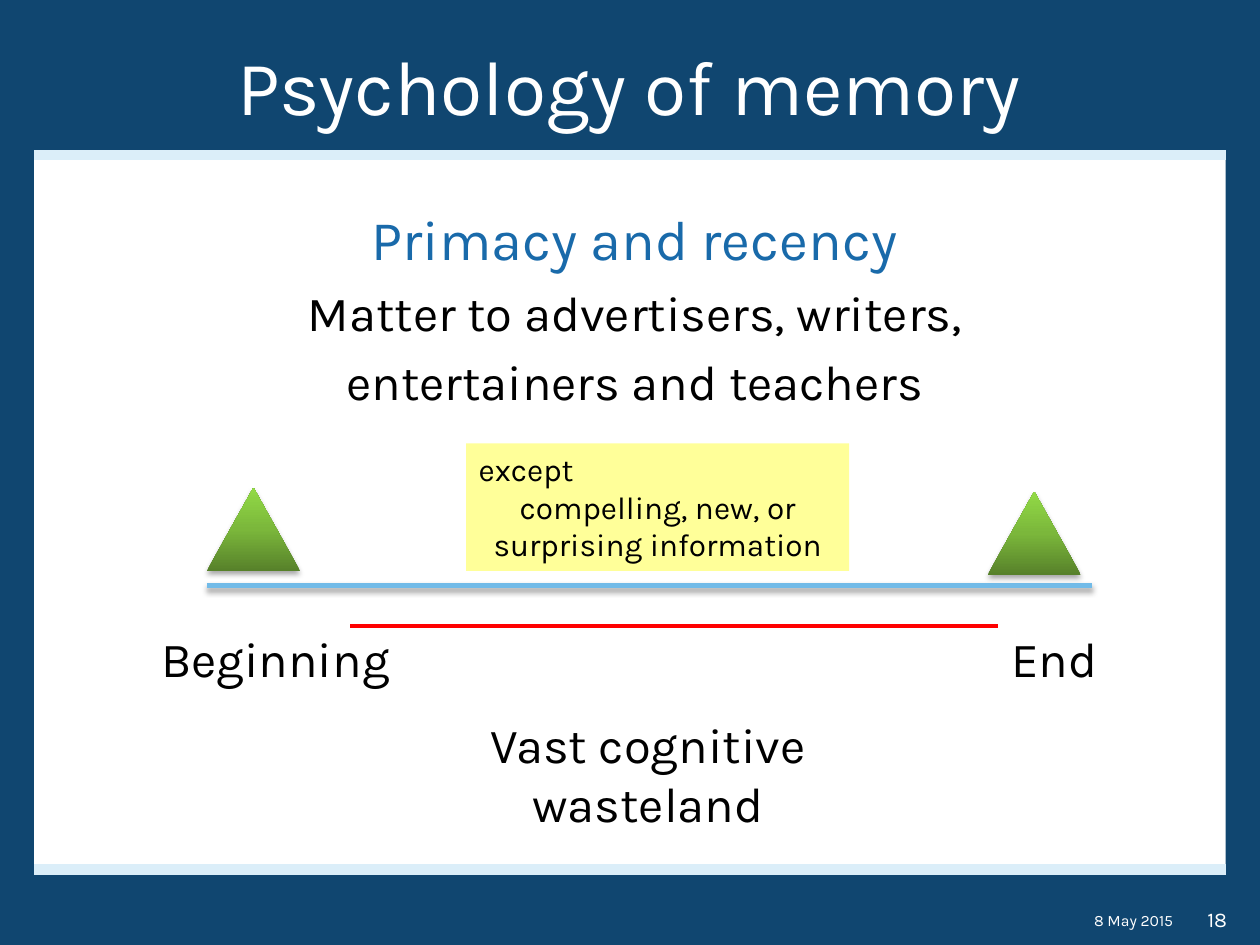
from copy import deepcopy
from lxml.etree import SubElement
from pptx import Presentation
from pptx.dml.color import RGBColor
from pptx.enum.shapes import MSO_CONNECTOR, MSO_SHAPE
from pptx.enum.text import MSO_ANCHOR, MSO_AUTO_SIZE, PP_ALIGN
from pptx.oxml.ns import qn
from pptx.util import Cm, Pt

HUES = {
    "back": "104670", "panel": "FFFFFF", "edge": "DBEEF9", "head": "196AAA",
    "text": "000000", "white": "FFFFFF", "axis": "72BBE8", "note": "FFFF99",
    "bar": "FF0000", "dark": "57812A", "mid": "7BB73B", "light": "92DA46",
}
LEFT, MID, RIGHT = PP_ALIGN.LEFT, PP_ALIGN.CENTER, PP_ALIGN.RIGHT
TIGHT = {"margin_left": Cm(0.25), "margin_right": Cm(0.25),
         "margin_top": Cm(0.13), "margin_bottom": Cm(0.13)}


def hue(name):
    return RGBColor.from_string(HUES[name])


def apply(item, form):
    for key, value in form.items():
        setattr(item, key, value)


def place(item, box):
    apply(item, dict(zip(("left", "top", "width", "height"), map(Cm, box))))


def write(frame, rows, gap=0, anchor=MSO_ANCHOR.TOP, form={}):
    apply(frame, {"word_wrap": True, "auto_size": MSO_AUTO_SIZE.NONE,
                  "vertical_anchor": anchor, **form})
    for i, (text, size, tint, align) in enumerate(rows):
        para = frame.add_paragraph() if i else frame.paragraphs[0]
        props = para._p.get_or_add_pPr()
        apply_list = {"marL": "0", "indent": "0"}
        for key, value in apply_list.items():
            props.set(key, value)
        SubElement(props, qn("a:buNone"))
        apply(para, {"alignment": align, "space_before": Pt(gap if i else 0)})
        run = para.add_run()
        run.text = text
        apply(run.font, {"name": "Karla", "size": Pt(size)})
        run.font.color.rgb = hue(tint)


def label(slide, box, rows, **extra):
    area = slide.shapes.add_textbox(*map(Cm, box))
    write(area.text_frame, rows, **extra)


def effect(item, shade):
    group = SubElement(item._element.spPr, qn("a:effectLst"))
    if shade:
        cast = SubElement(group, qn("a:outerShdw"), blurRad="40000", dist="23000",
                          dir="5400000", rotWithShape="0")
        tone = SubElement(cast, qn("a:srgbClr"), val=HUES["text"])
        SubElement(tone, qn("a:alpha"), val="35000")


def rule(slide, left, right, y, tint, width, shade=False):
    line = slide.shapes.add_connector(MSO_CONNECTOR.STRAIGHT,
                                      Cm(left), Cm(y), Cm(right), Cm(y))
    line.line.color.rgb = hue(tint)
    line.line.width = Pt(width)
    effect(line, shade)
    return line


def block(slide, box, tint, edge=None):
    item = slide.shapes.add_shape(MSO_SHAPE.RECTANGLE, *map(Cm, box))
    item.fill.solid()
    item.fill.fore_color.rgb = hue(tint)
    if edge:
        item.line.color.rgb = hue(edge)
        item.line.width = Pt(1.5)
    else:
        item.line.fill.background()
    item.shadow.inherit = False
    return item


def peak(slide, box):
    item = slide.shapes.add_shape(MSO_SHAPE.ISOSCELES_TRIANGLE, *map(Cm, box))
    item.fill.gradient()
    item.fill.gradient_angle = 90
    stops = item._element.spPr.find(".//" + qn("a:gsLst"))
    stops.append(deepcopy(stops[-1]))
    tints = (("dark", 0), ("mid", 0.5), ("light", 1))
    for stop, (tint, spot) in zip(item.fill.gradient_stops, tints):
        stop.color.rgb = hue(tint)
        stop.position = spot
    item.line.fill.background()
    effect(item, True)


def panel(slide, box):
    x, y, w, h = box
    parts = [block(slide, box, "panel")]
    parts += [rule(slide, x, x + w, level, "edge", 6) for level in (y + h, y)]
    for i, part in enumerate(parts, 2):
        slide.shapes._spTree.insert(i, part._element)


def title(slide, box):
    item = slide.shapes.title
    place(item, box)
    write(item.text_frame, [("Psychology of memory", 44, "white", MID)],
          anchor=MSO_ANCHOR.MIDDLE)


def body(slide, box):
    item = slide.placeholders[1]
    place(item, box)
    write(item.text_frame, [
        ("Primacy and recency", 32, "head", MID),
        ("Matter to advertisers, writers,", 28, "text", MID),
        ("entertainers and teachers", 28, "text", MID),
    ], gap=6)


def chart(slide, box):
    x, y, w, h = box
    rule(slide, x + 1.17, x + w - 0.41, y + 2.87, "axis", 3, True)
    for dx, dy in ((1.17, 0.89), (16.91, 0.97)):
        peak(slide, (x + dx, y + dy, 1.88, 1.68))
    for text, dx, wide in (("Beginning", 0, 5.21), ("End", 17.14, 2.29)):
        label(slide, (x + dx, y + 3.61, wide, h - 3.61),
              [(text, 28, "text", LEFT)], form=TIGHT)
    note = block(slide, (x + 6.4, y, 7.72, 2.57), "note")
    write(note.text_frame, [
        ("except", 18, "text", LEFT),
        ("compelling, new, or", 18, "text", MID),
        ("surprising information", 18, "text", MID),
    ], form=TIGHT)
    block(slide, (x + 4.04, y + 3.61, 13.11, 0.13), "bar", "white")


def foot(slide, box):
    x, y, w, h = box
    label(slide, (x + w - 1.7, y, 1.7, h), [("18", 12, "white", RIGHT)],
          anchor=MSO_ANCHOR.MIDDLE)
    label(slide, (x, y + 0.26, w - 1.09, 0.64), [("8 May 2015", 9, "white", RIGHT)])


def main():
    deck = Presentation()
    apply(deck, {"slide_width": Cm(25.4), "slide_height": Cm(19.05)})
    slide = deck.slides.add_slide(deck.slide_layouts[1])
    slide.background.fill.solid()
    slide.background.fill.fore_color.rgb = hue("back")
    panel(slide, (0.69, 3.12, 24.02, 14.41))
    title(slide, (0.69, 0.33, 24, 2.77))
    body(slide, (1.9, 4, 21.79, 12.66))
    label(slide, (8.13, 14.27, 9.86, 2.62),
          [("Vast cognitive wasteland", 28, "text", MID)], form=TIGHT)
    chart(slide, (3, 8.94, 19.43, 5.03))
    foot(slide, (8.51, 17.98, 16.48, 1.09))
    deck.save("out.pptx")


if __name__ == "__main__":
    main()
